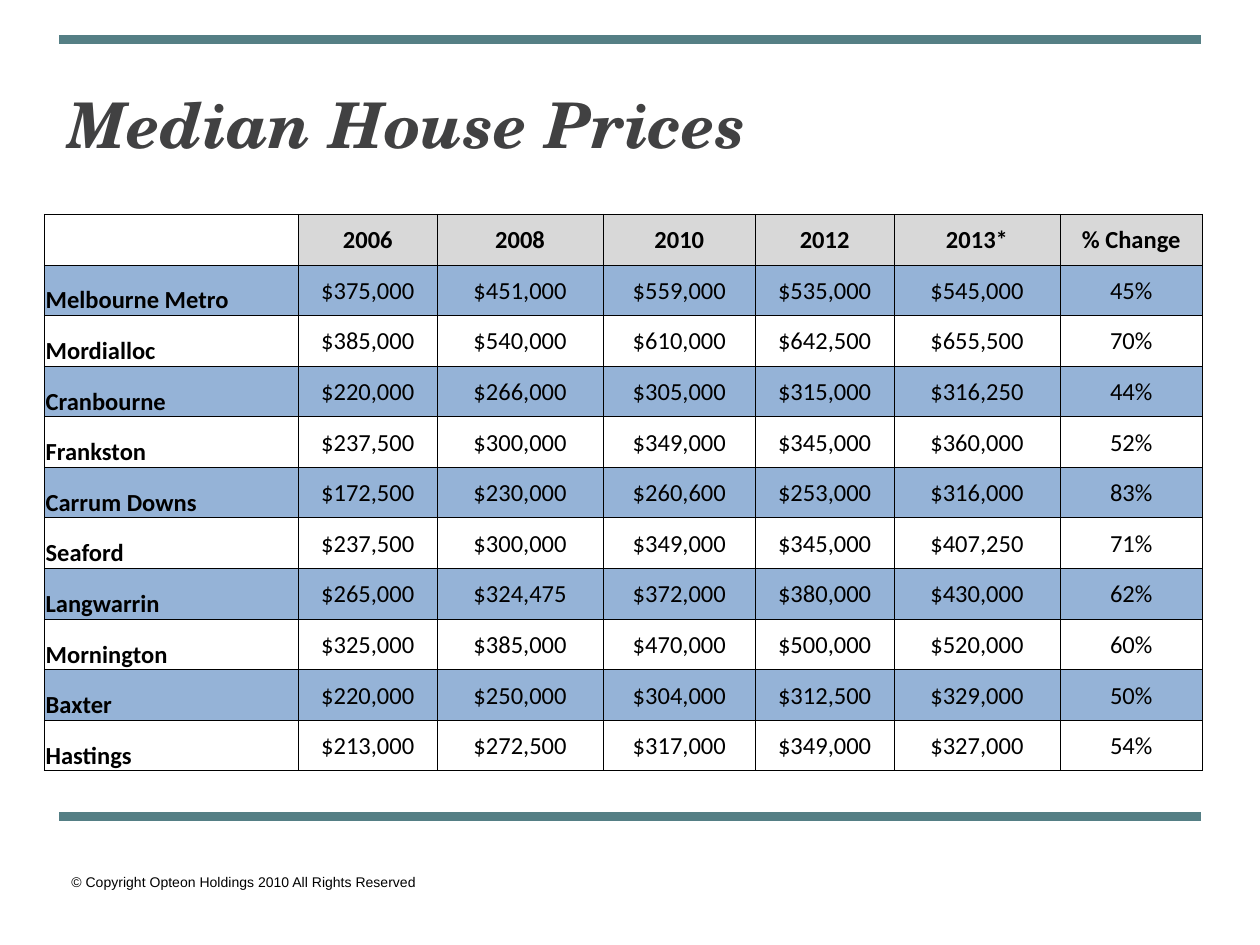
"""Build a slide with a table of median house prices by suburb."""
import lxml.etree
import pptx
import pptx.dml.color
import pptx.enum.shapes
import pptx.enum.text
import pptx.oxml.ns
import pptx.util
from dataclasses import dataclass

Cm, Pt = pptx.util.Cm, pptx.util.Pt
RGB = pptx.dml.color.RGBColor.from_string
ANCHOR, ALIGN = pptx.enum.text.MSO_ANCHOR, pptx.enum.text.PP_ALIGN
qn = pptx.oxml.ns.qn

TITLE = "Median House Prices"
COPYRIGHT = "© Copyright Opteon Holdings 2010 All Rights Reserved"
HEADER = ["", "2006", "2008", "2010", "2012", "2013*", "% Change"]
PRICES = [
    ["Melbourne Metro", "$375,000", "$451,000", "$559,000", "$535,000", "$545,000", "45%"],
    ["Mordialloc", "$385,000", "$540,000", "$610,000", "$642,500", "$655,500", "70%"],
    ["Cranbourne", "$220,000", "$266,000", "$305,000", "$315,000", "$316,250", "44%"],
    ["Frankston", "$237,500", "$300,000", "$349,000", "$345,000", "$360,000", "52%"],
    ["Carrum Downs", "$172,500", "$230,000", "$260,600", "$253,000", "$316,000", "83%"],
    ["Seaford", "$237,500", "$300,000", "$349,000", "$345,000", "$407,250", "71%"],
    ["Langwarrin", "$265,000", "$324,475", "$372,000", "$380,000", "$430,000", "62%"],
    ["Mornington", "$325,000", "$385,000", "$470,000", "$500,000", "$520,000", "60%"],
    ["Baxter", "$220,000", "$250,000", "$304,000", "$312,500", "$329,000", "50%"],
    ["Hastings", "$213,000", "$272,500", "$317,000", "$349,000", "$327,000", "54%"],
]
COLUMN_WIDTHS = [5.13, 2.79, 3.35, 3.07, 2.79, 3.35, 2.87]
ROW_HEIGHT = 1.02
TABLE_LEFT, TABLE_TOP = 0.89, 4.32
RULE_LEFT, RULE_RIGHT = 1.19, 24.21
RULE_TOPS = [0.79, 16.46]


@dataclass(frozen=True)
class Theme:
    rule: str = "557F85"
    title: str = "414142"
    text: str = "000000"
    header: str = "D8D8D8"
    band: str = "95B3D7"
    title_font: str = "TeX Gyre Schola"
    table_font: str = "Calibri"
    footer_font: str = "Arial"
    title_size: int = 36
    table_size: int = 14
    footer_size: int = 8
    rule_width: int = 5
    border_width: float = 0.5


THEME = Theme()


def style_runs(p, name, size, color, bold=False, italic=False):
    for r in p.runs:
        r.font.name, r.font.size = name, Pt(size)
        r.font.bold, r.font.italic = bold, italic
        r.font.color.rgb = RGB(color)


def add_rule(s, top):
    rule = s.shapes.add_connector(pptx.enum.shapes.MSO_CONNECTOR.STRAIGHT,
                                  Cm(RULE_LEFT), Cm(top), Cm(RULE_RIGHT), Cm(top))
    rule.line.color.rgb = RGB(THEME.rule)
    rule.line.width = Pt(THEME.rule_width)
    lxml.etree.SubElement(rule.element.spPr, qn("a:effectLst"))


def add_text(s, text, box, inset_top, *font, **emphasis):
    tf = s.shapes.add_textbox(*map(Cm, box)).text_frame
    tf.word_wrap = True
    tf.margin_top = Cm(inset_top)
    tf.text = text
    style_runs(tf.paragraphs[0], *font, **emphasis)


def add_borders(cell):
    tc_pr = cell._tc.get_or_add_tcPr()
    for i, side in enumerate(("a:lnL", "a:lnR", "a:lnT", "a:lnB")):
        line = lxml.etree.Element(qn(side), w=str(Pt(THEME.border_width)))
        fill = lxml.etree.SubElement(line, qn("a:solidFill"))
        lxml.etree.SubElement(fill, qn("a:srgbClr"), val=THEME.text)
        tc_pr.insert(i, line)


def fill_cell(cell, text, row, col):
    cell.margin_left = cell.margin_right = cell.margin_top = Cm(0.03)
    cell.margin_bottom = 0
    is_name = col == 0
    cell.vertical_anchor = ANCHOR.BOTTOM if is_name else ANCHOR.MIDDLE
    cell.text_frame.text = text
    p = cell.text_frame.paragraphs[0]
    p.alignment = ALIGN.LEFT if is_name else ALIGN.CENTER
    style_runs(p, THEME.table_font, THEME.table_size, THEME.text, bold=is_name or row == 0)
    color = THEME.band if row % 2 else THEME.header if row == 0 and text else None
    if color:
        cell.fill.solid()
        cell.fill.fore_color.rgb = RGB(color)
    else:
        cell.fill.background()
    add_borders(cell)


def add_price_table(s):
    rows = [HEADER] + PRICES
    table = s.shapes.add_table(len(rows), len(HEADER), Cm(TABLE_LEFT), Cm(TABLE_TOP),
                               Cm(sum(COLUMN_WIDTHS)), Cm(ROW_HEIGHT * len(rows))).table
    table.first_row = table.horz_banding = False
    for column, width in zip(table.columns, COLUMN_WIDTHS):
        column.width = Cm(width)
    for i, values in enumerate(rows):
        table.rows[i].height = Cm(ROW_HEIGHT)
        for j, text in enumerate(values):
            fill_cell(table.cell(i, j), text, i, j)


def main():
    prs = pptx.Presentation()
    prs.slide_width, prs.slide_height = Cm(25.4), Cm(19.05)
    s = prs.slides.add_slide(prs.slide_layouts[6])
    for top in RULE_TOPS:
        add_rule(s, top)
    add_text(s, COPYRIGHT, (1.19, 17.48, 7.85, 0.91), 0.13,
             THEME.footer_font, THEME.footer_size, THEME.text)
    add_text(s, TITLE, (1.12, 1.73, 22.86, 1.4), 0,
             THEME.title_font, THEME.title_size, THEME.title, bold=True, italic=True)
    add_price_table(s)
    prs.save("out.pptx")


if __name__ == "__main__":
    main()
